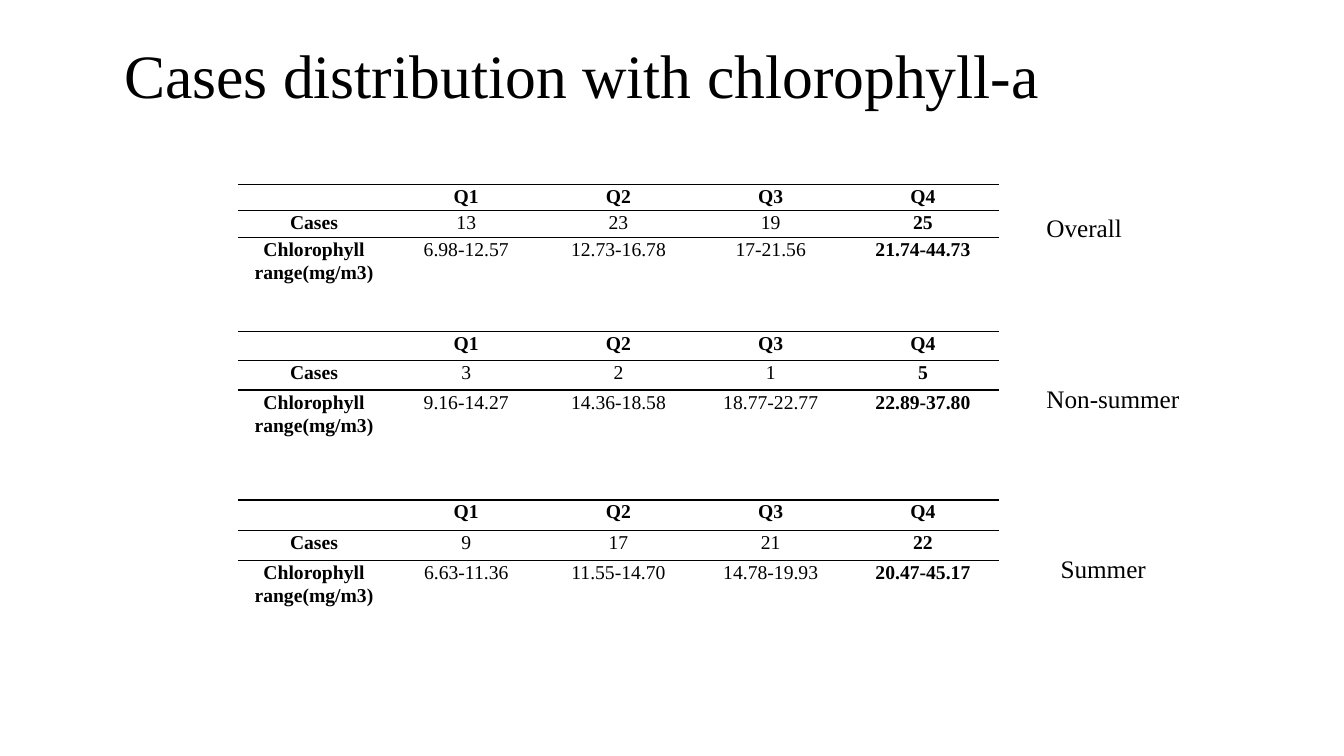
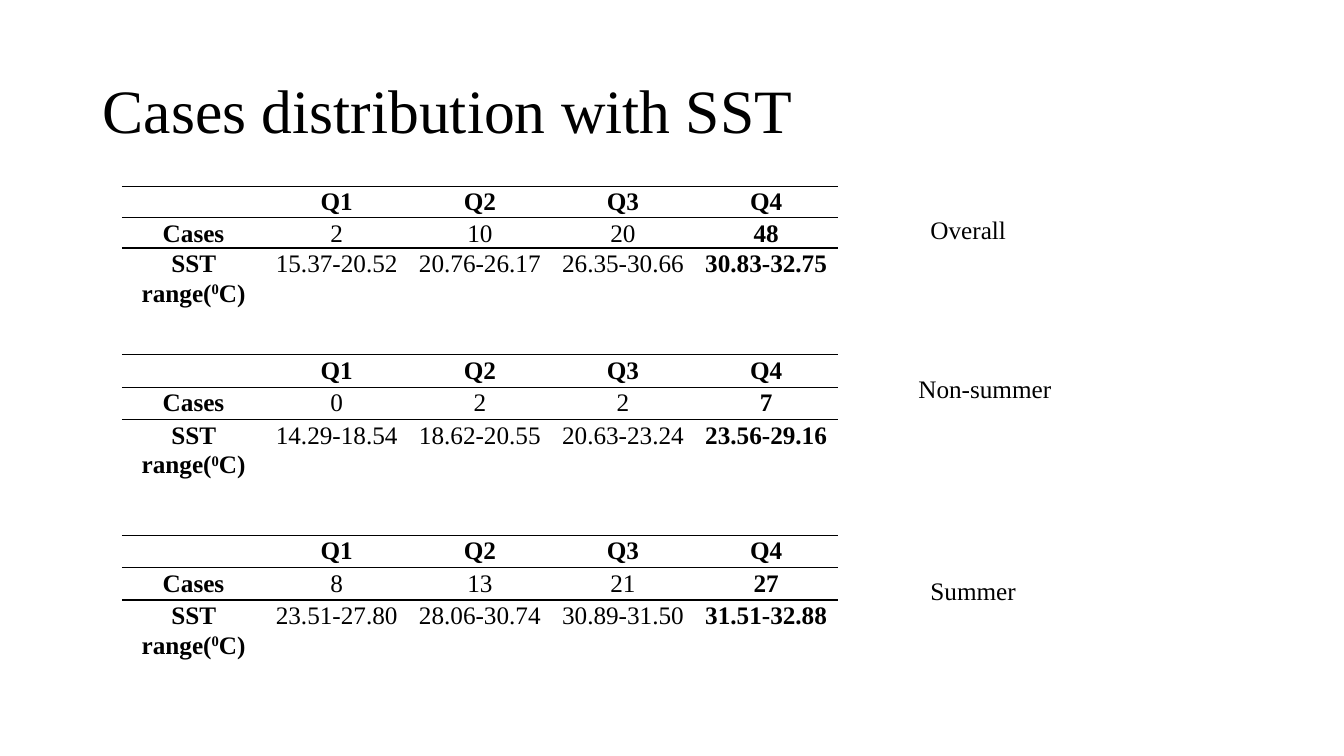
from dataclasses import dataclass

from lxml import etree
from pptx import Presentation
from pptx.dml.color import RGBColor
from pptx.enum import text
from pptx.oxml.ns import qn
from pptx.util import Inches, Pt


@dataclass(frozen=True)
class Theme:
    font: str = "Times New Roman"
    ink: str = "000000"
    title_size: int = 44
    label_size: int = 18
    rule_width: float = 1
    cell_margin: float = 0.07
    plain_table: str = "{2D5ABB26-0587-4C30-8999-92F81FD0307C}"


class Deck:
    def __init__(self, theme):
        self.theme = theme
        self.prs = Presentation()
        self.prs.slide_width, self.prs.slide_height = Inches(13.33), Inches(7.5)
        self.s = None

    def style(self, p, size, bold=False):
        p.font.name = self.theme.font
        p.font.size = Pt(size)
        p.font.bold = bold
        p.font.color.rgb = RGBColor.from_string(self.theme.ink)

    def slide(self, title, left, top):
        self.s = self.prs.slides.add_slide(self.prs.slide_layouts[5])
        sp = self.s.shapes.title
        sp.left, sp.top = Inches(left), Inches(top)
        sp.width, sp.height = Inches(11.5), Inches(1.45)
        tf = sp.text_frame
        tf.vertical_anchor = text.MSO_ANCHOR.MIDDLE
        p = tf.paragraphs[0]
        p.alignment = text.PP_ALIGN.LEFT
        p.line_spacing = 0.9
        p.add_run().text = title
        self.style(p, self.theme.title_size)

    def label(self, words, left, top):
        sp = self.s.shapes.add_textbox(Inches(left), Inches(top), Inches(1.61), Inches(0.4))
        tf = sp.text_frame
        tf.word_wrap = True
        p = tf.paragraphs[0]
        p.add_run().text = words
        self.style(p, self.theme.label_size)

    def rule(self, cell, side):
        """Draw one edge of a cell; side is "T" or "B"."""
        tc_pr = cell._tc.get_or_add_tcPr()
        ln = etree.SubElement(tc_pr, qn(f"a:ln{side}"), w=str(Pt(self.theme.rule_width)))
        fill = etree.SubElement(ln, qn("a:solidFill"))
        etree.SubElement(fill, qn("a:srgbClr"), val=self.theme.ink)

    def cell(self, cell, words, size, bold):
        """Fill a cell; text between two ^ marks is superscript."""
        cell.margin_left = cell.margin_right = Inches(self.theme.cell_margin)
        cell.margin_top = cell.margin_bottom = 0
        p = cell.text_frame.paragraphs[0]
        p.alignment = text.PP_ALIGN.CENTER
        p.line_spacing = 1.07
        self.style(p, size, bold)
        if not words:
            etree.SubElement(p._p, qn("a:endParaRPr"), sz=str(size * 100))
            return
        for i, part in enumerate(words.split("^")):
            r = p.add_run()
            r.text = part
            if i % 2:
                r.font._element.set("baseline", "30000")

    def table(self, rows, left, top, col_width, heights, size):
        """Add a table with rules around its header and bold outer columns."""
        cols = len(rows[0])
        frame = self.s.shapes.add_table(
            len(rows), cols, Inches(left), Inches(top),
            Inches(col_width * cols), Inches(sum(heights)))
        tbl = frame.table
        tbl.horz_banding = False
        tbl._tbl.tblPr.find(qn("a:tableStyleId")).text = self.theme.plain_table
        for column in tbl.columns:
            column.width = Inches(col_width)
        for i, row in enumerate(rows):
            tbl.rows[i].height = Inches(heights[i])
            for j, words in enumerate(row):
                cell = tbl.cell(i, j)
                self.cell(cell, words, size, i == 0 or j in (0, cols - 1))
                if i < 2:
                    self.rule(cell, "T")
                if i == 0:
                    self.rule(cell, "B")
                cell.fill.background()


HEADER = ["", "Q1", "Q2", "Q3", "Q4"]
SST_HEIGHTS = (0.31, 0.3, 0.61)

# Each season: label, label left and top, table top, row heights, cases, ranges
SLIDES = [
    dict(
        title="Cases distribution with chlorophyll-a", title_at=(1.13, 0.05),
        measure="Chlorophyll range(mg/m3)", left=2.36, col_width=1.51, size=14,
        seasons=[
            ("Overall", 10.28, 2.06, 1.83, (0.26, 0.27, 0.75),
             "13 23 19 25", "6.98-12.57 12.73-16.78 17-21.56 21.74-44.73"),
            ("Non-summer", 10.28, 3.75, 3.29, (0.29, 0.29, 0.71),
             "3 2 1 5", "9.16-14.27 14.36-18.58 18.77-22.77 22.89-37.80"),
            ("Summer", 10.42, 5.44, 4.96, (0.3, 0.3, 0.75),
             "9 17 21 22", "6.63-11.36 11.55-14.70 14.78-19.93 20.47-45.17"),
        ]),
    dict(
        title="Cases distribution with SST", title_at=(0.92, 0.4),
        measure="SST range(^0^C)", left=1.21, col_width=1.42, size=18,
        seasons=[
            ("Overall", 9.13, 2.08, 1.85, SST_HEIGHTS,
             "2 10 20 48", "15.37-20.52 20.76-26.17 26.35-30.66 30.83-32.75"),
            ("Non-summer", 9.01, 3.65, 3.52, SST_HEIGHTS,
             "0 2 2 7", "14.29-18.54 18.62-20.55 20.63-23.24 23.56-29.16"),
            ("Summer", 9.13, 5.66, 5.31, SST_HEIGHTS,
             "8 13 21 27", "23.51-27.80 28.06-30.74 30.89-31.50 31.51-32.88"),
        ]),
]


def main():
    deck = Deck(Theme())
    for d in SLIDES:
        deck.slide(d["title"], *d["title_at"])
        for name, label_left, label_top, top, heights, cases, ranges in d["seasons"]:
            rows = [HEADER, ["Cases", *cases.split()], [d["measure"], *ranges.split()]]
            deck.table(rows, d["left"], top, d["col_width"], heights, d["size"])
            deck.label(name, label_left, label_top)
    deck.prs.save("out.pptx")


if __name__ == "__main__":
    main()
